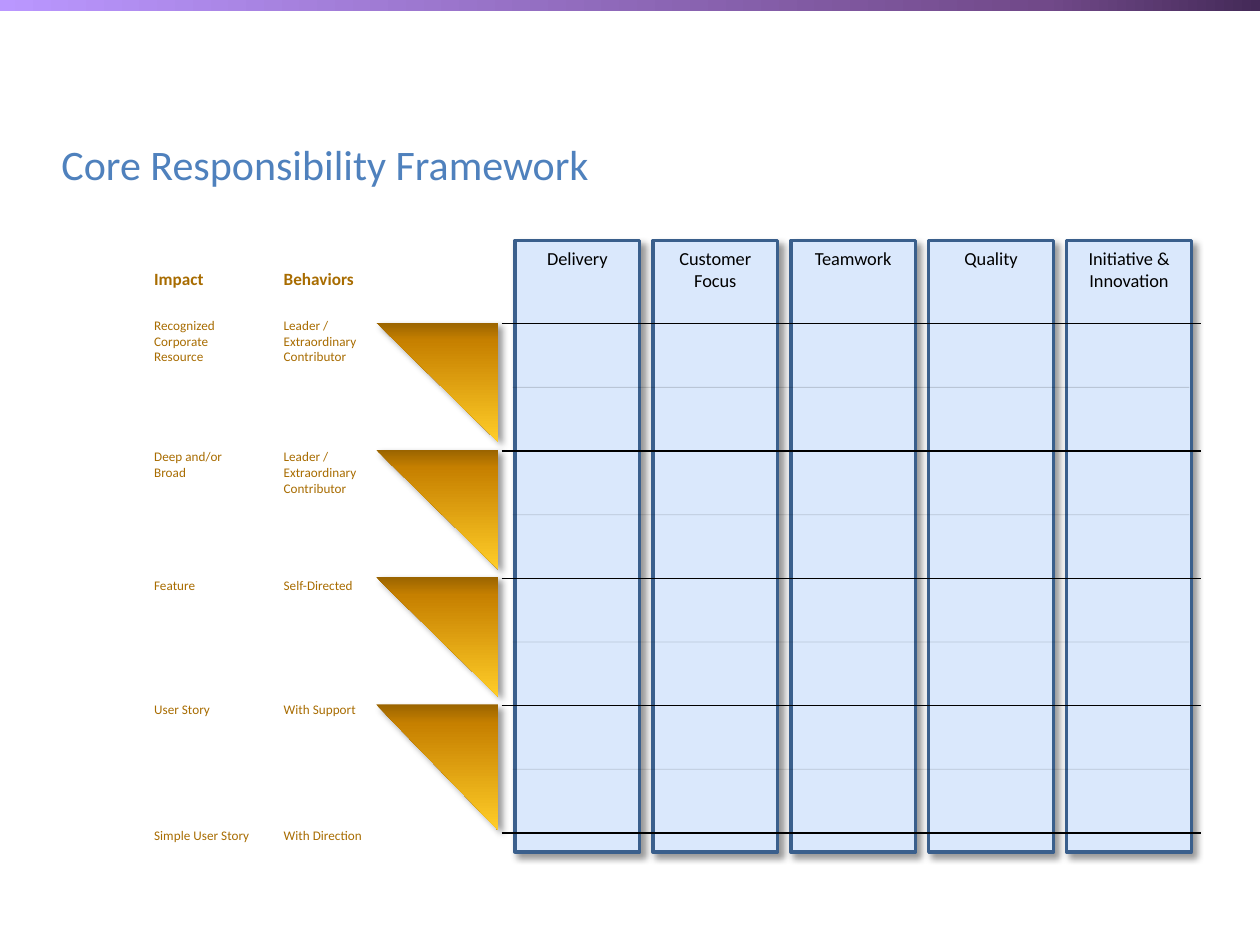
from dataclasses import dataclass

from lxml import etree
from pptx import Presentation
from pptx.dml.color import RGBColor
from pptx.enum import shapes, text
from pptx.oxml.ns import qn
from pptx.util import Pt


@dataclass(frozen=True)
class Theme:
    font: str = "Calibri"
    title: str = "4F81BD"
    label: str = "A86C00"
    ink: str = "000000"
    column_fill: str = "DAE8FC"
    column_edge: str = "3A5F8C"
    bar: tuple = ((0, "442A58"), (17, "714989"), (100, "BA97FF"))
    gold: tuple = ((0, "9A6400"), (15, "C68000"), (100, "FFCD28"))
    title_size: float = 24
    column_size: float = 10.5
    heading_size: float = 9.8
    label_size: float = 7.5


def add_xml(parent, tag, **attributes):
    child = etree.SubElement(parent, qn(tag))
    for key, value in attributes.items():
        child.set(key, str(value))
    return child


class SlideBuilder:
    def __init__(self, slide, theme):
        self.slide, self.theme = slide, theme

    def shape(self, kind, left, top, width, height):
        shape = self.slide.shapes.add_shape(
            kind, Pt(left), Pt(top), Pt(width), Pt(height))
        shape.shadow.inherit = False
        shape.line.fill.background()
        return shape

    def gradient(self, shape, stops, angle):
        shape.fill.gradient()
        shape.fill.gradient_angle = angle
        stop_list = shape._element.spPr.find(".//" + qn("a:gsLst"))
        for old_stop in list(stop_list):
            stop_list.remove(old_stop)
        for percent, color in stops:
            stop = add_xml(stop_list, "a:gs", pos=percent * 1000)
            add_xml(stop, "a:srgbClr", val=color)

    def cast_shadow(self, shape):
        effects = shape._element.spPr.find(qn("a:effectLst"))
        shadow = add_xml(effects, "a:outerShdw", blurRad=Pt(4), dist=Pt(3),
                         dir=45 * 60000, algn="tl", rotWithShape=0)
        color = add_xml(shadow, "a:srgbClr", val=self.theme.ink)
        add_xml(color, "a:alpha", val=40000)

    def fill_text(self, frame, lines, size, color, bold=False, align=None):
        frame.text = "\n".join(lines)
        for paragraph in frame.paragraphs:
            paragraph.alignment = align
            font = paragraph.font
            font.name, font.size, font.bold = self.theme.font, Pt(size), bold
            font.color.rgb = RGBColor.from_string(color)

    def top_bar(self, left, top, width, height):
        bar = self.shape(shapes.MSO_SHAPE.RECTANGLE, left, top, width, height)
        self.gradient(bar, self.theme.bar, 180)

    def column(self, name, left, top, width, height):
        theme = self.theme
        column = self.shape(shapes.MSO_SHAPE.RECTANGLE, left, top, width, height)
        column.fill.solid()
        column.fill.fore_color.rgb = RGBColor.from_string(theme.column_fill)
        column.line.color.rgb = RGBColor.from_string(theme.column_edge)
        column.line.width = Pt(2)
        self.cast_shadow(column)
        column.text_frame.vertical_anchor = text.MSO_ANCHOR.TOP
        self.fill_text(column.text_frame, [name], theme.column_size, theme.ink,
                       align=text.PP_ALIGN.CENTER)

    def rule(self, left, right, y, weight, opacity=100):
        rule = self.slide.shapes.add_connector(
            shapes.MSO_CONNECTOR.STRAIGHT, Pt(left), Pt(y), Pt(right), Pt(y))
        rule.line.color.rgb = RGBColor.from_string(self.theme.ink)
        rule.line.width = Pt(weight)
        properties = rule._element.spPr
        if opacity < 100:
            color = properties.find(".//" + qn("a:srgbClr"))
            add_xml(color, "a:alpha", val=opacity * 1000)
        add_xml(properties, "a:effectLst")

    def wedge(self, left, top, width, height):
        wedge = self.shape(shapes.MSO_SHAPE.RIGHT_TRIANGLE,
                           left, top, width, height)
        wedge.rotation = 180
        self.gradient(wedge, self.theme.gold, 90)
        self.cast_shadow(wedge)

    def text_box(self, lines, left, top, width, height, size, color,
                 bold=False, wrap=False):
        box = self.slide.shapes.add_textbox(
            Pt(left), Pt(top), Pt(width), Pt(height))
        frame = box.text_frame
        self.fill_text(frame, lines, size, color, bold)
        frame.word_wrap = wrap
        if not wrap:
            frame.auto_size = text.MSO_AUTO_SIZE.SHAPE_TO_FIT_TEXT

    def label(self, lines, left, top, width):
        size = self.theme.label_size
        height = 7.2 + 9.15 * len(lines)
        self.text_box(lines, left, top, width, height, size, self.theme.label)

    def heading(self, name, left, top, width):
        self.text_box([name], left, top, width, 19.2,
                      self.theme.heading_size, self.theme.label, bold=True)


COLUMNS = ["Delivery", "Customer Focus", "Teamwork", "Quality",
           "Initiative & Innovation"]
LEADER = ["Leader /", "Extraordinary", "Contributor"]
# Label top, impact lines and width, behavior lines and width
LEVELS = [
    (177.8, ["Recognized", "Corporate", "Resource"], 56.2, LEADER, 61.2),
    (252.7, ["Deep and/or", "Broad"], 58.3, LEADER, 61.2),
    (326.2, ["Feature"], 40.3, ["Self-Directed"], 58.3),
    (397, ["User Story"], 50.4, ["With Support"], 58.3),
    (469.4, ["Simple User Story"], 75.6, ["With Direction"], 61.2),
]
LEVEL_TOP, LEVEL_STEP = 185, 72.75
IMPACT_LEFT, BEHAVIOR_LEFT = 81, 155


def main():
    deck = Presentation()
    deck.slide_width, deck.slide_height = Pt(720), Pt(540)
    theme = Theme()
    builder = SlideBuilder(deck.slides.add_slide(deck.slide_layouts[6]), theme)
    level_lines = [LEVEL_TOP + LEVEL_STEP * i for i in range(len(LEVELS))]

    # Top bar
    builder.top_bar(-1.5, -1.5, 721.5, 8)

    # Responsibility columns
    for i, name in enumerate(COLUMNS):
        builder.column(name, 294.3 + 78.8 * i, 137.5, 71.3, 349.3)

    # Level lines and faint half-level lines
    for y in level_lines:
        builder.rule(286.6, 686.2, y, 0.75)
    for y in level_lines[:-1]:
        builder.rule(293, 679.7, y + LEVEL_STEP / 2, 0.5, opacity=15)

    # Wedges between levels, the last one slightly taller
    for y, height in zip(level_lines, [68.4, 68.4, 68.4, 72]):
        builder.wedge(215, y - 0.7, 69.8, height)

    # Impact and behavior labels
    builder.heading("Impact", IMPACT_LEFT, 149.8, 46)
    builder.heading("Behaviors", BEHAVIOR_LEFT, 149.8, 62)
    for top, impact, impact_width, behavior, behavior_width in LEVELS:
        builder.label(impact, IMPACT_LEFT, top, impact_width)
        builder.label(behavior, BEHAVIOR_LEFT, top, behavior_width)

    # Title
    builder.text_box(["Core Responsibility Framework"], 28, 75.6, 666, 36,
                     theme.title_size, theme.title, wrap=True)

    deck.save("out.pptx")


if __name__ == "__main__":
    main()
